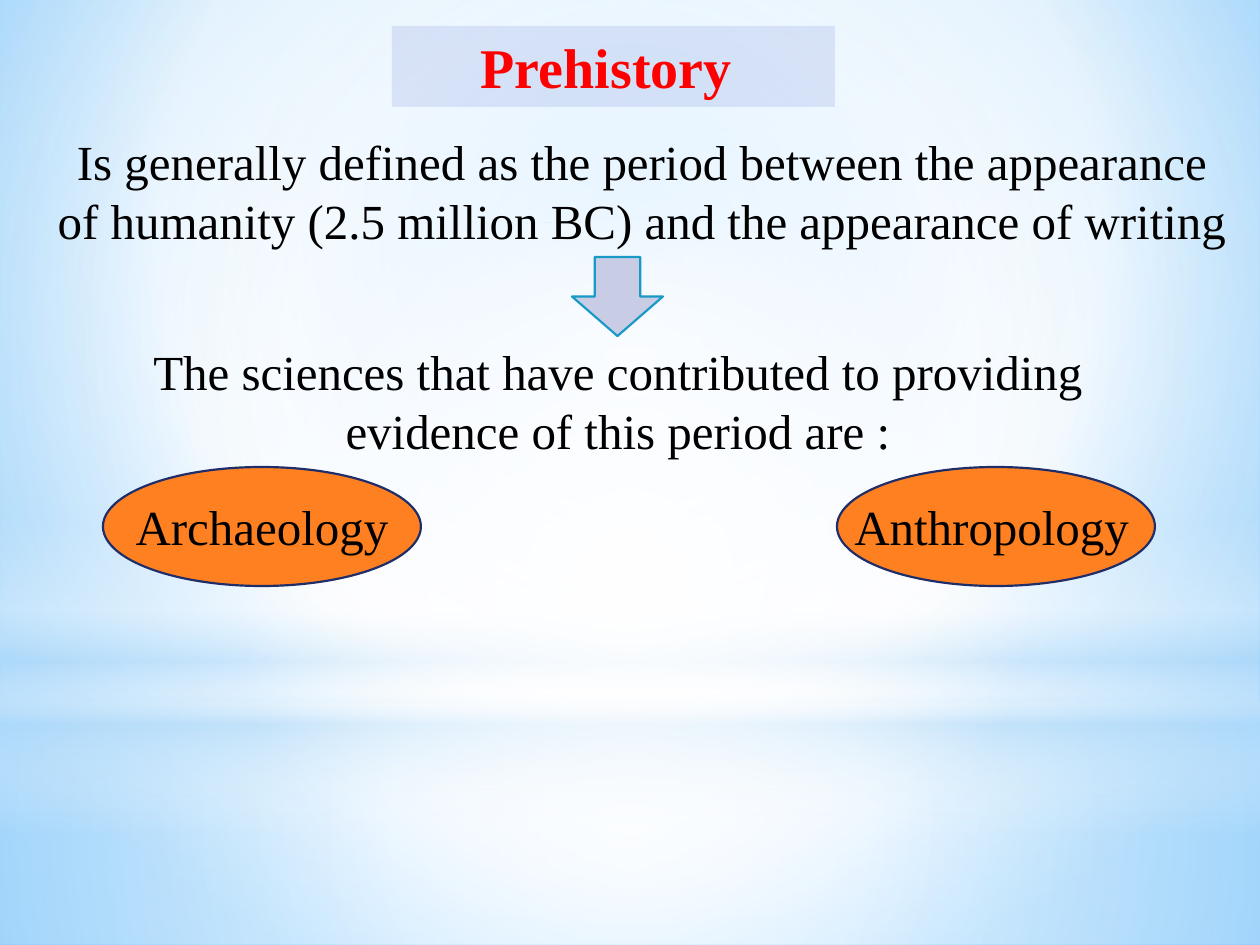
from lxml import etree
from pptx import Presentation
from pptx.dml.color import RGBColor
from pptx.enum.shapes import MSO_SHAPE
from pptx.enum.text import PP_ALIGN
from pptx.oxml.ns import qn
from pptx.util import Emu, Pt

RECTANGLE, OVAL, DOWN_ARROW = MSO_SHAPE.RECTANGLE, MSO_SHAPE.OVAL, MSO_SHAPE.DOWN_ARROW
LEFT, CENTER = PP_ALIGN.LEFT, PP_ALIGN.CENTER
PX = 914400 // 126
WIDTH, HEIGHT = 1260, 945
FONT = "Times New Roman"
WHITE, PALE, BLACK = "FFFFFF", "B4DCFA", "000000"
MIDDLE = (50, 50, 50, 50)

BACKDROP = [(0, "9ED5FF", 100), (60, WHITE, 100), (100, "5BB9FF", 100)]
BACKDROP_FOCUS = (20, 10, 20, 60)
GLOWS = [
    (RECTANGLE, 703, 242, [(0, WHITE, 91), (37, WHITE, 76), (100, PALE, 79)], MIDDLE),
    (RECTANGLE, 0, 703, [(0, WHITE, 89), (48, WHITE, 62), (100, PALE, 79)], MIDDLE),
    (RECTANGLE, 519, 315, [(0, WHITE, 0), (29, WHITE, 30), (45, PALE, 40),
                           (55, WHITE, 26), (65, PALE, 60), (100, WHITE, 0)], None),
    (OVAL, 221, 703, [(0, WHITE, 100), (56, WHITE, 0)], MIDDLE),
]
TITLE = ("Prehistory ", (392, 26, 443, 81))
STATEMENTS = [
    ("Is generally defined as the period between the appearance of humanity "
     "(2.5 million BC) and the appearance of writing", (44, 125, 1196, 131)),
    ("The sciences that have contributed to providing evidence of this period are :",
     (87, 335, 1062, 131)),
]
ARROW = (572, 257, 91, 79)
SCIENCES = [("Archaeology", 103, 338, CENTER), ("Anthropology", 837, 307, LEFT)]
OVAL_TOP, OVAL_WIDTH, OVAL_HEIGHT = 467, 318, 119
LABEL_TOP, LABEL_HEIGHT = 490, 72


def rgb(color):
    return RGBColor.from_string(color)


def place(box):
    return [Emu(length * PX) for length in box]


def add_element(parent, tag, **attributes):
    return etree.SubElement(parent, qn(tag), {k: str(v) for k, v in attributes.items()})


def set_gradient(owner, fill, stops, focus):
    fill.gradient()
    gradient = next(owner.iter(qn("a:gradFill")))
    for child in list(gradient):
        gradient.remove(child)
    stop_list = add_element(gradient, "a:gsLst")
    for position, color, opacity in stops:
        stop = add_element(stop_list, "a:gs", pos=position * 1000)
        tint = add_element(stop, "a:srgbClr", val=color)
        if opacity < 100:
            add_element(tint, "a:alpha", val=opacity * 1000)
    if focus:
        circle = add_element(gradient, "a:path", path="circle")
        add_element(circle, "a:fillToRect",
                    **{side: inset * 1000 for side, inset in zip("ltrb", focus)})
    else:
        add_element(gradient, "a:lin", ang=90 * 60000, scaled=0)


def add_figure(slide, kind, box, fill=None, line=None):
    figure = slide.shapes.add_shape(kind, *place(box))
    figure.shadow.inherit = False
    if fill:
        figure.fill.solid()
        figure.fill.fore_color.rgb = rgb(fill)
    if line:
        figure.line.color.rgb = rgb(line)
        figure.line.width = Pt(1.25)
    else:
        figure.line.fill.background()
    return figure


def write(figure, text, size=28, color=BLACK, bold=False, align=CENTER):
    figure.text_frame.word_wrap = True
    paragraph = figure.text_frame.paragraphs[0]
    paragraph.text = text
    paragraph.alignment = align
    font = paragraph.runs[0].font
    font.name, font.size, font.bold = FONT, Pt(size), bold
    font.color.rgb = rgb(color)


def add_text(slide, text, box, align=CENTER):
    write(slide.shapes.add_textbox(*place(box)), text, align=align)


def main():
    deck = Presentation()
    deck.slide_width, deck.slide_height = place((WIDTH, HEIGHT))
    slide = deck.slides.add_slide(deck.slide_layouts[6])
    set_gradient(slide.element, slide.background.fill, BACKDROP, BACKDROP_FOCUS)

    for kind, top, height, stops, focus in GLOWS:
        glow = add_figure(slide, kind, (0, top, WIDTH, height))
        set_gradient(glow.element, glow.fill, stops, focus)

    heading, heading_box = TITLE
    banner = add_figure(slide, RECTANGLE, heading_box, "4E67C8")
    add_element(next(banner.element.iter(qn("a:srgbClr"))), "a:alpha", val=14000)
    write(banner, heading, 32, "FF0000", True)

    for statement, box in STATEMENTS:
        add_text(slide, statement, box)
    add_figure(slide, DOWN_ARROW, ARROW, "C8CDE5", "1999C6")

    for science, left, label_width, align in SCIENCES:
        add_figure(slide, OVAL, (left, OVAL_TOP, OVAL_WIDTH, OVAL_HEIGHT), "FF8021", "1F2E69")
        label_left = left + (OVAL_WIDTH - label_width) // 2
        add_text(slide, science, (label_left, LABEL_TOP, label_width, LABEL_HEIGHT), align)

    deck.save("out.pptx")


if __name__ == "__main__":
    main()
